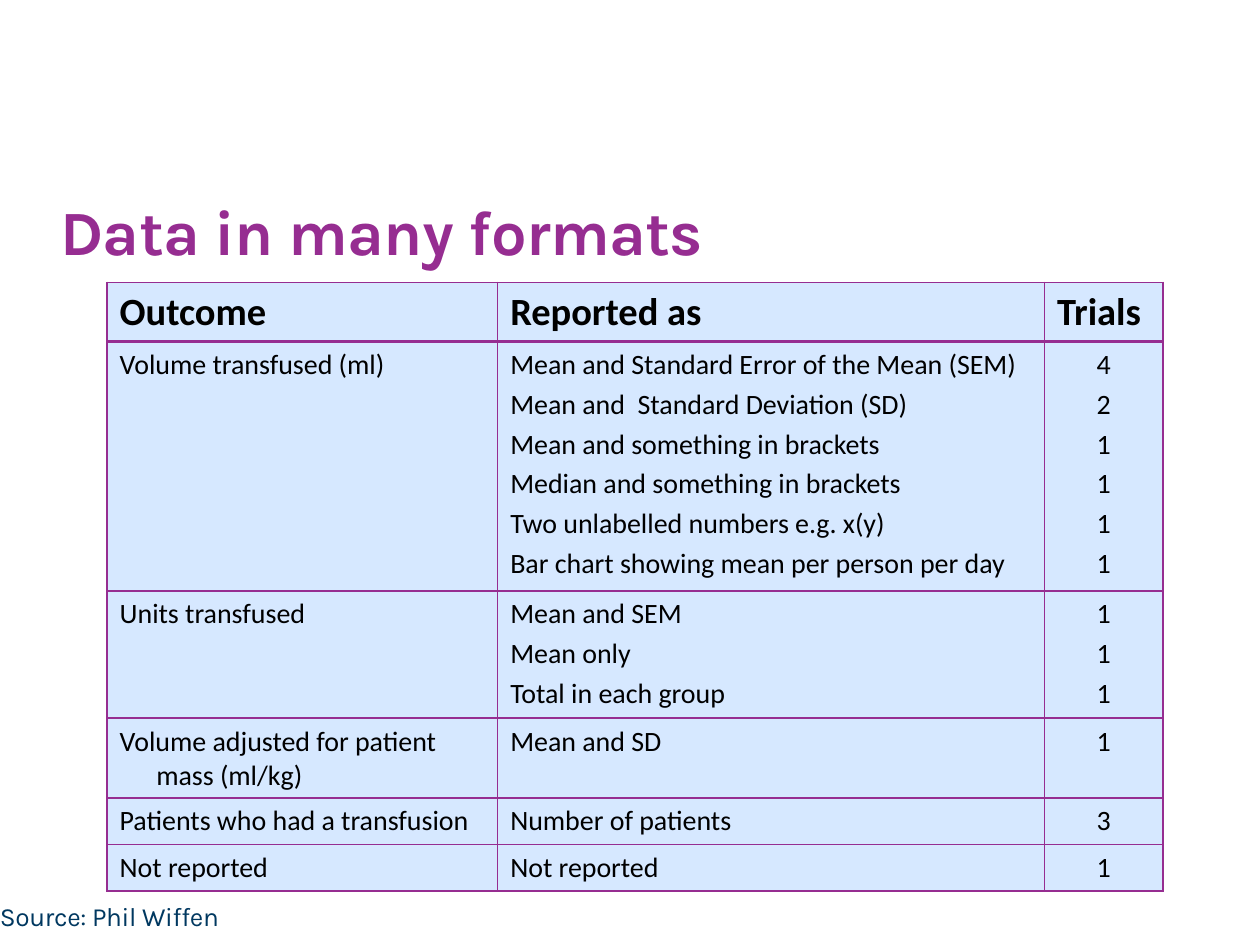
from lxml import etree
from pptx import Presentation
from pptx.dml.color import RGBColor
from pptx.enum.text import MSO_ANCHOR, PP_ALIGN
from pptx.oxml.ns import qn
from pptx.util import Inches, Pt

LEFT, MID = PP_ALIGN.LEFT, PP_ALIGN.CENTER
TOP, BOTTOM = MSO_ANCHOR.TOP, MSO_ANCHOR.BOTTOM
PURPLE, NAVY, BLACK, PALE = "962D91", "003860", "000000", "D6E8FF"
COLS = [3.1, 4.34, 0.94]
TALL = [0.47, 1.98, 1.01, 0.63, 0.37, 0.37]
ROWS = [
    (["Outcome"], ["Reported as"], ["Trials"]),
    (["Volume transfused (ml)"],
     ["Mean and Standard Error of the Mean (SEM)",
      "Mean and  Standard Deviation (SD)",
      "Mean and something in brackets",
      "Median and something in brackets",
      "Two unlabelled numbers e.g. x(y)",
      "Bar chart showing mean per person per day"],
     ["4", "2", "1", "1", "1", "1"]),
    (["Units transfused"],
     ["Mean and SEM", "Mean only", "Total in each group"],
     ["1", "1", "1"]),
    (["Volume adjusted for patient mass (ml/kg)"], ["Mean and SD"], ["1"]),
    (["Patients who had a transfusion"], ["Number of patients"], ["3"]),
    (["Not reported"], ["Not reported"], ["1"]),
]


def tint(code):
    return RGBColor.from_string(code)


def write(frame, lines, size, color=BLACK, face="Calibri", bold=False,
          align=LEFT, gap=0, line=None, track=None, hang=0):
    for i, text in enumerate(lines):
        para = frame.paragraphs[0] if i == 0 else frame.add_paragraph()
        para.alignment = align
        para.space_before = Pt(gap if i else 0)
        if line:
            para.line_spacing = line
        if hang:
            props = para._p.get_or_add_pPr()
            props.set("marL", str(Inches(hang)))
            props.set("indent", str(-Inches(hang)))
        run = para.add_run()
        run.text = text
        font = run.font
        font.name, font.size, font.bold = face, Pt(size), bold
        font.color.rgb = tint(color)
        if track:
            font._element.set("spc", str(track))


def label(slide, box, text, anchor=TOP, **style):
    frame = slide.shapes.add_textbox(*map(Inches, box)).text_frame
    frame.word_wrap = True
    frame.vertical_anchor = anchor
    frame.margin_left = frame.margin_right = 0
    frame.margin_top = frame.margin_bottom = 0
    write(frame, [text], face="Karla", **style)


def edge(cell, side, width):
    line = etree.SubElement(cell._tc.get_or_add_tcPr(), qn("a:ln" + side))
    line.set("w", str(Pt(width)))
    fill = etree.SubElement(line, qn("a:solidFill"))
    etree.SubElement(fill, qn("a:srgbClr")).set("val", PURPLE)


def grid(slide, box):
    table = slide.shapes.add_table(
        len(ROWS), len(COLS), *map(Inches, box)).table
    table.first_row = table.horz_banding = False
    for col, width in zip(table.columns, COLS):
        col.width = Inches(width)
    for r, row in enumerate(ROWS):
        table.rows[r].height = Inches(TALL[r])
        head = r == 0
        for c, lines in enumerate(row):
            cell = table.cell(r, c)
            for side in "LRTB":
                thick = (r, side) in ((0, "B"), (1, "T"))
                edge(cell, side, 2 if thick else 1)
            cell.fill.solid()
            cell.fill.fore_color.rgb = tint(PALE)
            write(cell.text_frame, lines, 22 if head else 16, bold=head,
                  align=MID if c == 2 and not head else LEFT, gap=3.2,
                  hang=0.29 if (r, c) == (3, 0) else 0)


def main():
    deck = Presentation()
    deck.slide_width, deck.slide_height = Inches(10), Inches(7.5)
    slide = deck.slides.add_slide(deck.slide_layouts[6])
    label(slide, (0.48, 1.44, 6.69, 0.69), "Data in many formats", BOTTOM,
          size=36, color=PURPLE, bold=True, track=-40)
    label(slide, (0, 7.17, 3.83, 0.33), "Source: Phil Wiffen",
          size=15, color=NAVY, line=0.9, track=-20)
    grid(slide, (0.85, 2.24, sum(COLS), sum(TALL)))
    deck.save("out.pptx")


if __name__ == "__main__":
    main()
